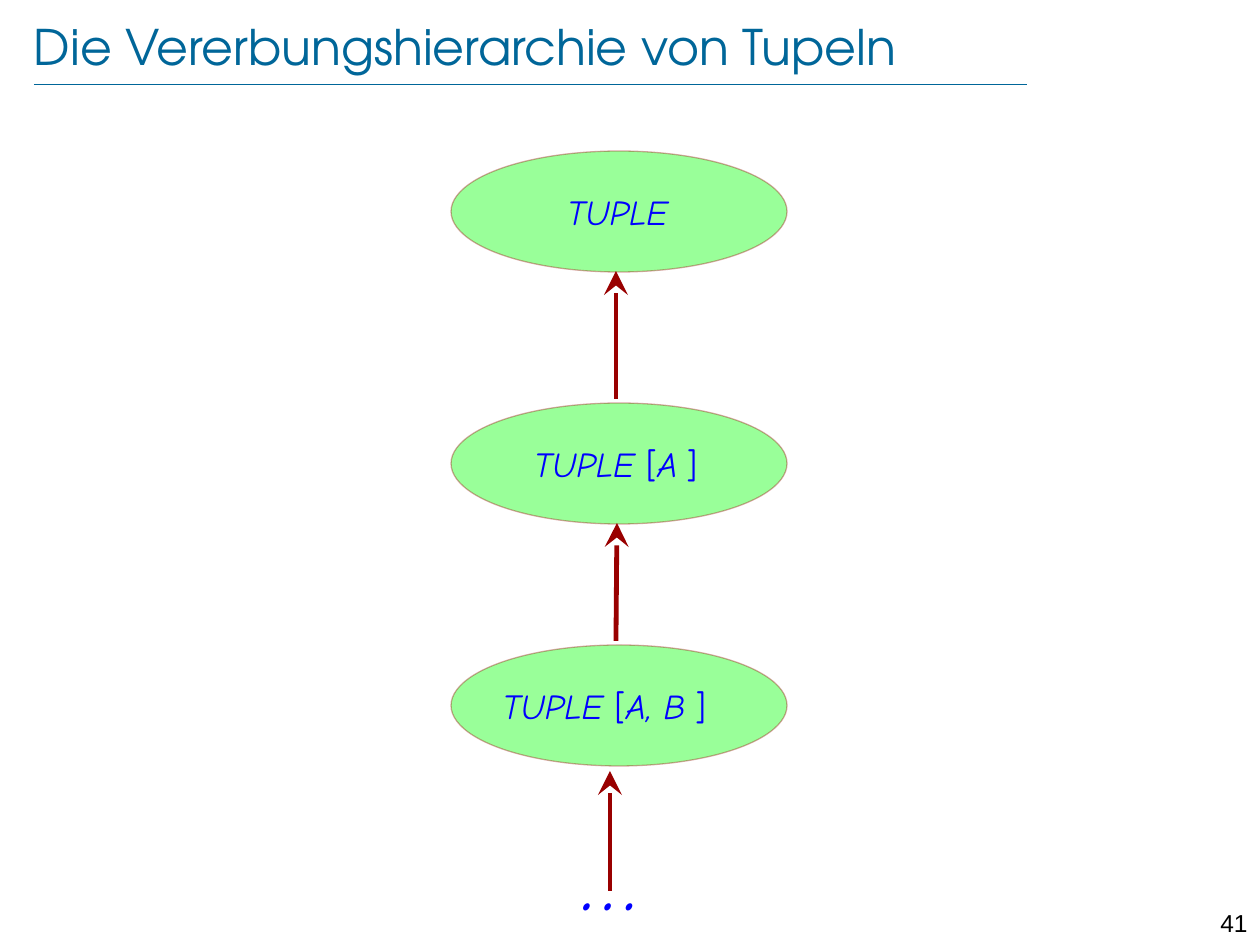
"""Build the slide on the inheritance hierarchy of tuples."""
from lxml import etree
from pptx import Presentation
from pptx import util as u
from pptx.dml.color import RGBColor
from pptx.enum import shapes, text
from pptx.oxml.ns import qn

TITLE = "Die Vererbungshierarchie von Tupeln"
TITLE_FONT, CODE_FONT, NUMBER_FONT = "TeX Gyre Adventor", "Comic Neue", "Arial"
TEAL, BLUE, GREEN, RED, BLACK = "006699", "0000FF", "99FF99", "990000", "000000"
LEFT, CENTER, RIGHT = text.PP_ALIGN.LEFT, text.PP_ALIGN.CENTER, text.PP_ALIGN.RIGHT

NODE_LEFT, NODE_WIDTH, NODE_HEIGHT = 451, 336, 121
LABEL_WIDTH, LABEL_HEIGHT, LABEL_DROP = 273, 55, 33
NODES = [
    (645, 490, LEFT, [("TUPLE ", 20, True), ("[", 20, False), ("A, B", 20, True),
                      (" ", 16, True), ("]", 20, False)]),
    (403, 479, CENTER, [("TUPLE ", 20, True), ("[", 20, False), ("A", 20, True),
                        (" ", 14, True), ("]", 20, False)]),
    (151, 481, CENTER, [("TUPLE", 20, True)]),
]
ARROWS = [(616, 641, 617, 523), (616, 399, 616, 271), (610, 891, 610, 771)]


def px(value):
    return u.Emu(round(value * 914400 / 126))


def color(value):
    return RGBColor.from_string(value)


def add_runs(paragraph, runs, font, ink):
    for words, size, italic in runs:
        run = paragraph.add_run()
        run.text = words
        run.font.name = font
        run.font.size = u.Pt(size)
        run.font.italic = italic
        run.font.color.rgb = color(ink)


def add_text(slide, box, runs, font, ink, align=LEFT, inset=True):
    frame = slide.shapes.add_textbox(*map(px, box)).text_frame
    frame.word_wrap = True
    if not inset:
        clear_margins(frame)
    paragraph = frame.paragraphs[0]
    paragraph.alignment = align
    add_runs(paragraph, runs, font, ink)


def clear_margins(frame):
    frame.margin_left = frame.margin_right = frame.margin_top = frame.margin_bottom = 0


def add_line(slide, ends, ink, width, arrow=False):
    connector = slide.shapes.add_connector(shapes.MSO_CONNECTOR.STRAIGHT, *map(px, ends))
    connector.line.color.rgb = color(ink)
    connector.line.width = u.Pt(width)
    properties = connector.line._get_or_add_ln()
    if arrow:
        etree.SubElement(properties, qn("a:tailEnd"), type="stealth", w="lg", len="lg")
    etree.SubElement(properties.getparent(), qn("a:effectLst"))


def add_ellipse(slide, top):
    box = (NODE_LEFT, top, NODE_WIDTH, NODE_HEIGHT)
    shape = slide.shapes.add_shape(shapes.MSO_SHAPE.OVAL, *map(px, box))
    shape.shadow.inherit = False
    shape.fill.solid()
    shape.fill.fore_color.rgb = color(GREEN)
    shape.line.color.rgb = color(RED)
    shape.line.width = u.Pt(0.75)
    ink = shape.line._get_or_add_ln().find(".//" + qn("a:srgbClr"))
    etree.SubElement(ink, qn("a:alpha"), val="34000")


def add_title(slide):
    title = slide.shapes.title
    title.left, title.top, title.width, title.height = map(px, (34, 16, 1142, 60))
    frame = title.text_frame
    clear_margins(frame)
    frame.vertical_anchor = text.MSO_ANCHOR.MIDDLE
    paragraph = frame.paragraphs[0]
    paragraph.alignment = LEFT
    add_runs(paragraph, [(TITLE, 28, False)], TITLE_FONT, TEAL)


def main():
    presentation = Presentation()
    presentation.slide_width, presentation.slide_height = u.Inches(10), u.Inches(7.5)
    slide = presentation.slides.add_slide(presentation.slide_layouts[5])
    add_line(slide, (34, 84, 1027, 84), TEAL, 0.25)
    add_text(slide, (1191, 902, 69, 30), [("41", 14, False)], NUMBER_FONT, BLACK, RIGHT)
    add_title(slide)
    for top, label_left, align, runs in NODES:
        add_ellipse(slide, top)
        box = (label_left, top + LABEL_DROP, LABEL_WIDTH, LABEL_HEIGHT)
        add_text(slide, box, runs, CODE_FONT, BLUE, align)
    for ends in ARROWS:
        add_line(slide, ends, RED, 2.75, arrow=True)
    add_text(slide, (582, 827, 93, 102), [("…", 48, True)], CODE_FONT, BLUE, inset=False)
    presentation.save("out.pptx")


if __name__ == "__main__":
    main()
